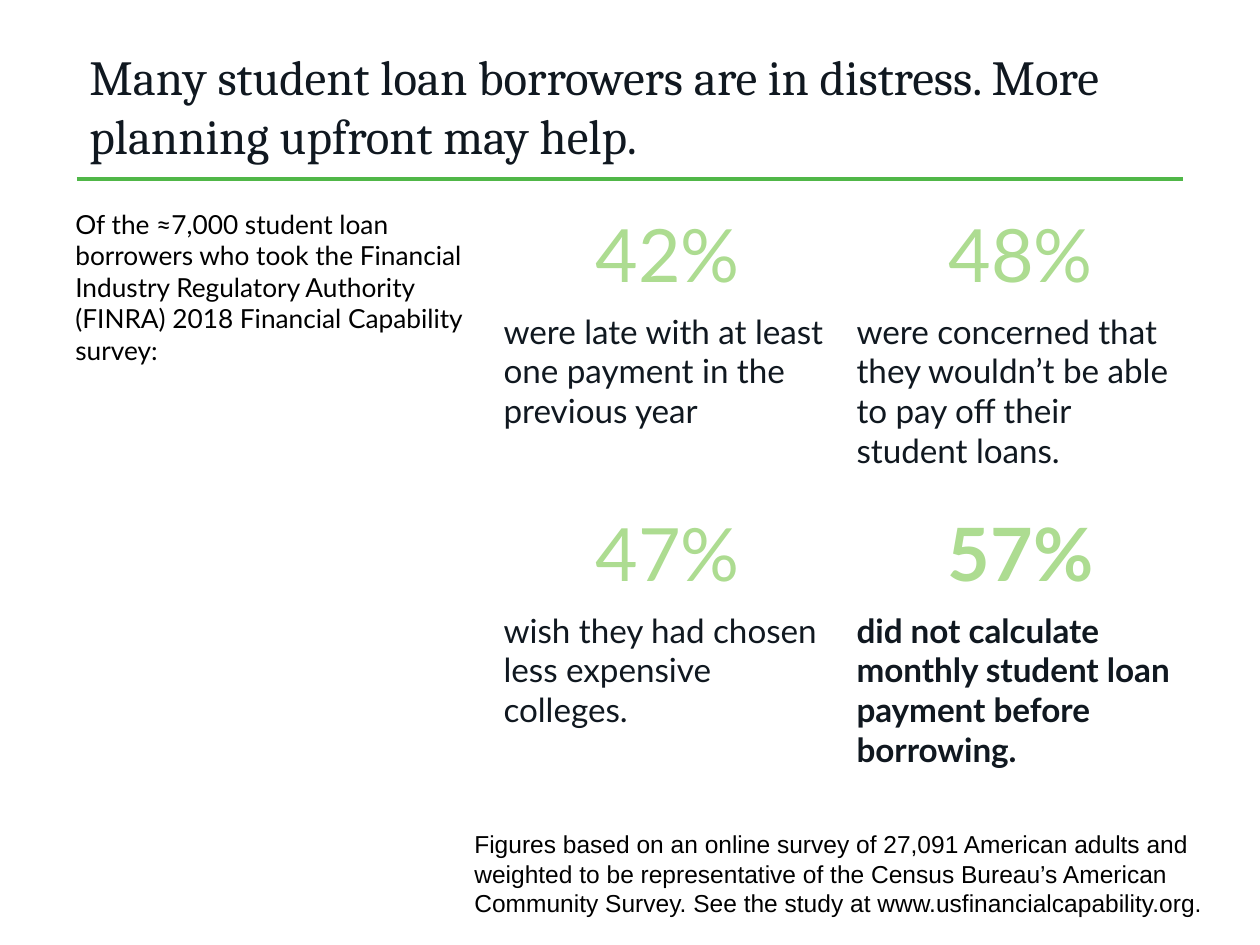
from dataclasses import dataclass

from lxml import etree
from pptx import Presentation
from pptx import util as u
from pptx.dml.color import RGBColor
from pptx.enum import shapes, text
from pptx.oxml.ns import qn


@dataclass(frozen=True)
class Theme:
    ink: str = "101820"
    black: str = "000000"
    rule: str = "50B748"
    accent: str = "ADDC91"
    heading_font: str = "Cambria"
    body_font: str = "Lato"
    note_font: str = "Arial"
    title_size: int = 28
    figure_size: int = 42
    finding_size: int = 19
    intro_size: int = 15
    note_size: int = 14


THEME = Theme()
PX_PER_INCH = 126


def px(length):
    return u.Emu(round(length * 914400 / PX_PER_INCH))


def write(frame, content, *, size, font, color, bold=False, align=text.PP_ALIGN.LEFT):
    frame.word_wrap = True
    paragraph = frame.paragraphs[0]
    paragraph.alignment = align
    run = paragraph.add_run()
    run.text = content
    run.font.size = u.Pt(size)
    run.font.name = font
    run.font.bold = bold
    run.font.color.rgb = RGBColor.from_string(color)


def text_frame(slide, box, anchor=text.MSO_ANCHOR.TOP):
    frame = slide.shapes.add_textbox(*map(px, box)).text_frame
    frame.vertical_anchor = anchor
    return frame


def add_heading(slide, box):
    left, top, width, height = box
    title = text_frame(slide, (left, top, width, height - 23), text.MSO_ANCHOR.MIDDLE)
    write(title, "Many student loan borrowers are in distress. More planning upfront may help.",
          size=THEME.title_size, font=THEME.heading_font, color=THEME.ink)
    bottom = top + height
    rule = slide.shapes.add_connector(
        shapes.MSO_CONNECTOR.STRAIGHT, px(left), px(bottom), px(left + width), px(bottom))
    rule.line.color.rgb = RGBColor.from_string(THEME.rule)
    rule.line.width = u.Pt(2)
    etree.SubElement(rule._element.spPr, qn("a:effectLst"))


def add_intro(slide, box):
    write(text_frame(slide, box),
          "Of the ≈7,000 student loan borrowers who took the Financial Industry "
          "Regulatory Authority (FINRA) 2018 Financial Capability survey:",
          size=THEME.intro_size, font=THEME.body_font, color=THEME.black)


def add_findings(slide, box, findings):
    left, top, width, height = box
    figure_height = 101
    table = slide.shapes.add_table(2, len(findings), *map(px, box)).table
    table.first_row = table.horz_banding = False
    table.rows[0].height = px(figure_height)
    table.rows[1].height = px(height - figure_height)
    for column, (figure, finding, bold) in enumerate(findings):
        table.columns[column].width = px(width / len(findings))
        figure_cell, finding_cell = table.cell(0, column), table.cell(1, column)
        for cell in (figure_cell, finding_cell):
            cell.fill.background()
            for side in ("a:lnL", "a:lnR", "a:lnT", "a:lnB"):
                border = etree.Element(qn(side))
                etree.SubElement(border, qn("a:noFill"))
                cell._tc.tcPr.insert(len(cell._tc.tcPr) - 1, border)
        write(figure_cell.text_frame, figure, size=THEME.figure_size, font=THEME.body_font,
              color=THEME.accent, bold=bold, align=text.PP_ALIGN.CENTER)
        write(finding_cell.text_frame, finding, size=THEME.finding_size,
              font=THEME.body_font, color=THEME.ink, bold=bold)


def add_source_note(slide, box):
    write(text_frame(slide, box),
          "Figures based on an online survey of 27,091 American adults and weighted to be "
          "representative of the Census Bureau’s American Community Survey. "
          "See the study at www.usfinancialcapability.org.",
          size=THEME.note_size, font=THEME.note_font, color=THEME.black)


def main():
    deck = Presentation()
    deck.slide_width, deck.slide_height = px(1260), px(945)
    slide = deck.slides.add_slide(deck.slide_layouts[6])
    add_heading(slide, (77, 55, 1106, 124))
    add_intro(slide, (63, 202, 415, 171))
    add_findings(slide, (491, 204, 706, 285), [
        ("42%", "were late with at least one payment in the previous year", False),
        ("48%", "were concerned that they wouldn’t be able to pay off their student loans.", False),
    ])
    add_findings(slide, (491, 503, 706, 273), [
        ("47%", "wish they had chosen less expensive colleges.", False),
        ("57%", "did not calculate monthly student loan payment before borrowing.", True),
    ])
    add_source_note(slide, (462, 823, 819, 48))
    deck.save("out.pptx")


if __name__ == "__main__":
    main()
